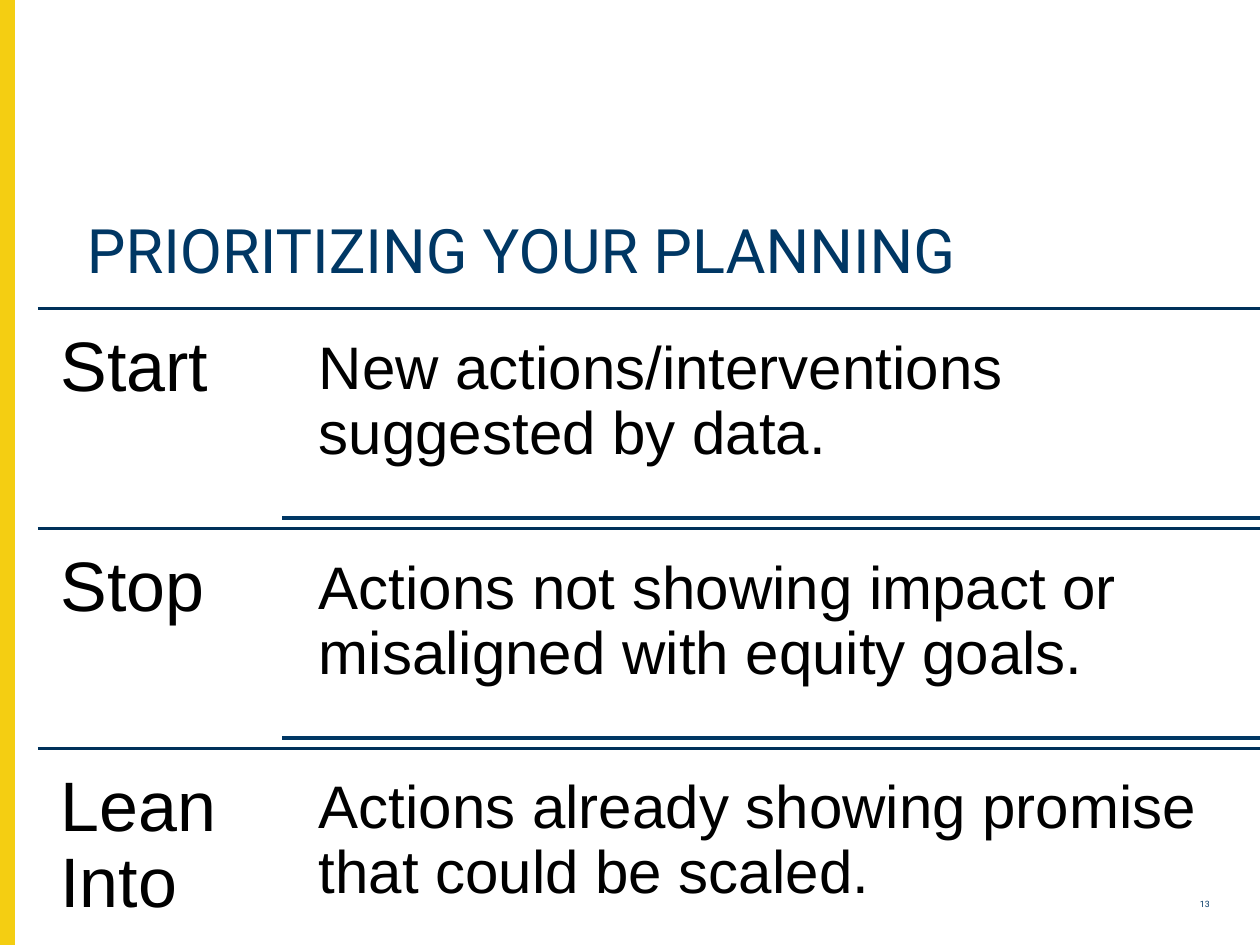
"""Build the slide that ranks planning actions as start, stop or lean into."""
import lxml.etree
import pptx
import pptx.dml.color
import pptx.enum.shapes
import pptx.enum.text
import pptx.oxml.ns
import pptx.util

Pt = pptx.util.Pt
RGBColor = pptx.dml.color.RGBColor
ALIGN = pptx.enum.text.PP_ALIGN

YELLOW = RGBColor(0xF4, 0xCE, 0x12)
NAVY = RGBColor(0x00, 0x37, 0x64)
DARK_NAVY = RGBColor(0x00, 0x31, 0x5A)
BLACK = RGBColor(0, 0, 0)

WIDTH, HEIGHT = 720, 540
TABLE_LEFT, TABLE_TOP, ROW_PITCH = 21.6, 176.4, 125.6
LABEL_WIDTH, DETAIL_LEFT = 139.7, 171.4
DETAIL_OFFSET, DETAIL_HEIGHT = 5.7, 114

ROWS = [
    ("Start", "New actions/interventions suggested by data."),
    ("Stop", "Actions not showing impact or misaligned with equity goals."),
    ("Lean Into", "Actions already showing promise that could be scaled."),
]


def write_text(shape, text, *, size, font, color, align=ALIGN.LEFT,
               inset_x=7.2, inset_y=3.6, space_after=6):
    frame = shape.text_frame
    frame.word_wrap = True
    frame.auto_size = pptx.enum.text.MSO_AUTO_SIZE.NONE
    frame.vertical_anchor = pptx.enum.text.MSO_ANCHOR.TOP
    frame.margin_left = frame.margin_right = Pt(inset_x)
    frame.margin_top = frame.margin_bottom = Pt(inset_y)
    paragraph = frame.paragraphs[0]
    paragraph.alignment = align
    paragraph.line_spacing = 0.9
    paragraph.space_after = Pt(space_after)
    run = paragraph.add_run()
    run.text = text
    run.font.size = Pt(size)
    run.font.name = font
    run.font.color.rgb = color


class SlideBuilder:
    heading_font = "Roboto"
    body_font = "Arial"
    rule_width = 2

    def __init__(self, slide):
        self.slide = slide

    def bar(self, left, top, width, height, color):
        shape = self.slide.shapes.add_shape(
            pptx.enum.shapes.MSO_SHAPE.RECTANGLE,
            Pt(left), Pt(top), Pt(width), Pt(height))
        shape.shadow.inherit = False
        shape.fill.solid()
        shape.fill.fore_color.rgb = color
        shape.line.color.rgb = color
        shape.line.width = Pt(1)

    def title(self, text, left, top, width, height):
        shape = self.slide.shapes.title
        shape.left, shape.top = Pt(left), Pt(top)
        shape.width, shape.height = Pt(width), Pt(height)
        write_text(shape, text, size=35, font=self.heading_font, color=NAVY,
                   space_after=0)

    def text(self, text, left, top, width, height, **text_format):
        shape = self.slide.shapes.add_textbox(
            Pt(left), Pt(top), Pt(width), Pt(height))
        write_text(shape, text, **text_format)

    def rule(self, left, top, color):
        connector = self.slide.shapes.add_connector(
            pptx.enum.shapes.MSO_CONNECTOR.STRAIGHT,
            Pt(left), Pt(top), Pt(WIDTH), Pt(top))
        connector.line.color.rgb = color
        connector.line.width = Pt(self.rule_width)
        lxml.etree.SubElement(connector._element.spPr,
                              pptx.oxml.ns.qn("a:effectLst"))

    def row(self, top, label, detail):
        self.rule(TABLE_LEFT, top, DARK_NAVY)
        self.text(label, TABLE_LEFT, top, LABEL_WIDTH, ROW_PITCH, size=40,
                  font=self.body_font, color=BLACK, inset_x=13, inset_y=13)
        self.text(detail, DETAIL_LEFT, top + DETAIL_OFFSET,
                  WIDTH - DETAIL_LEFT, DETAIL_HEIGHT, size=34.3,
                  font=self.body_font, color=BLACK, inset_x=10.8, inset_y=10.8)


def main():
    presentation = pptx.Presentation()
    presentation.slide_width = Pt(WIDTH)
    presentation.slide_height = Pt(HEIGHT)
    slide = presentation.slides.add_slide(presentation.slide_layouts[5])
    builder = SlideBuilder(slide)

    builder.bar(0, 0, 8, HEIGHT, YELLOW)
    builder.title("PRIORITIZING YOUR PLANNING", 42.5, 122.4, 656.6, 62.6)
    builder.text("13", 661.7, 510.5, 36.7, 18.7, size=5,
                 font=builder.heading_font, color=NAVY, align=ALIGN.RIGHT)

    for index, (label, detail) in enumerate(ROWS):
        top = TABLE_TOP + index * ROW_PITCH
        builder.row(top, label, detail)
        if index < len(ROWS) - 1:
            builder.rule(TABLE_LEFT + LABEL_WIDTH,
                         top + DETAIL_OFFSET + DETAIL_HEIGHT, NAVY)

    presentation.save("out.pptx")


if __name__ == "__main__":
    main()
